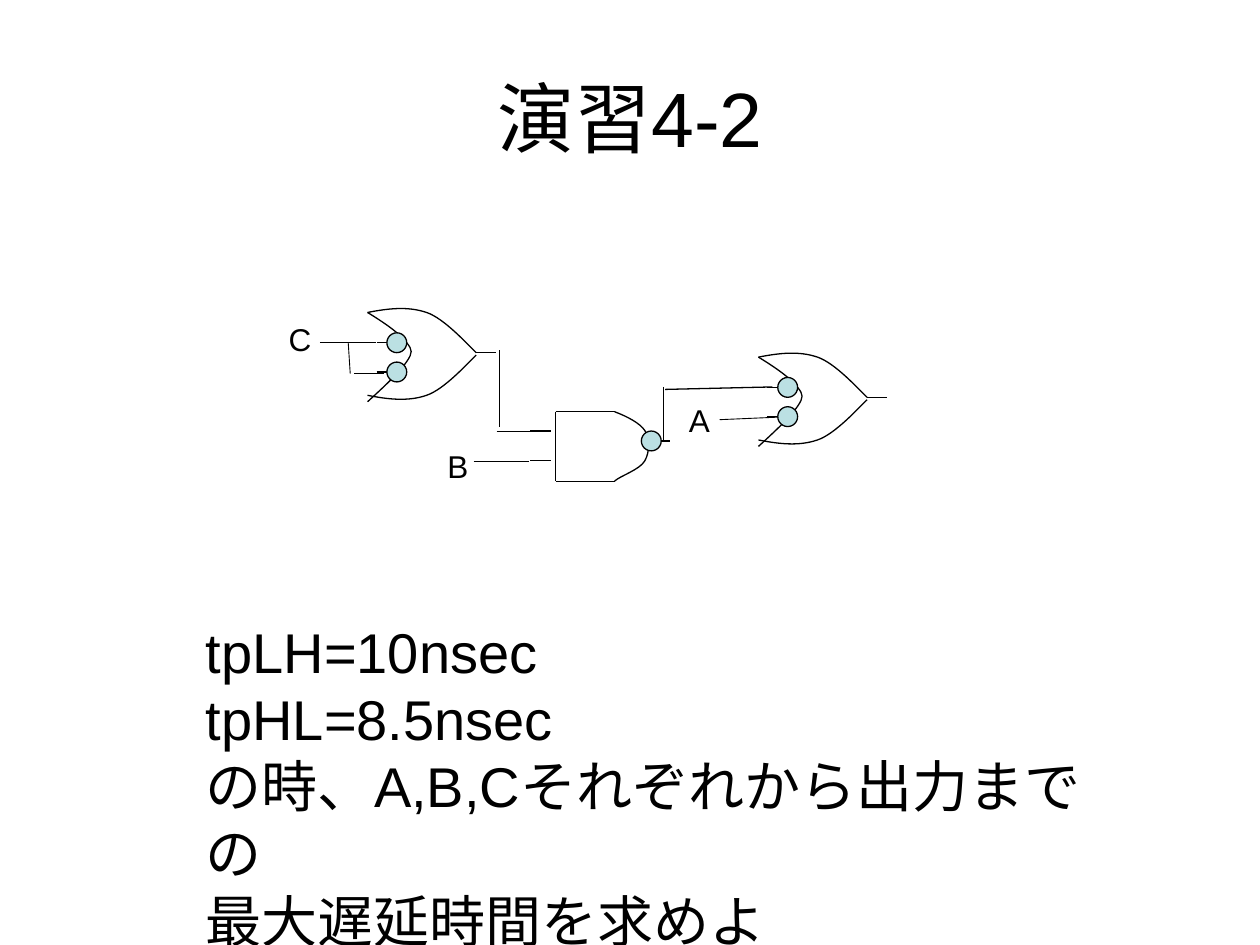
from lxml import etree
from pptx import Presentation
from pptx import util as u
from pptx.dml.color import RGBColor
from pptx.enum import shapes, text
from pptx.oxml import ns

BLACK = RGBColor(0x00, 0x00, 0x00)
BUBBLE_BLUE = RGBColor(0xBB, 0xE0, 0xE3)
BUBBLE_SIZE = 0.4
GATE_PT, WIRE_PT = 0.75, 0.5
UNITS_PER_CM = 1000

OR_UPPER = [(0, 0.13), (0.41, 0.05), (0.81, 0), (1.19, 0.13),
            (1.55, 0.25), (2.03, 0.79), (2.19, 0.94)]
OR_HEIGHT = 1.93
OR_BACK = [(0, 0.13), (0.33, 0.33), (0.66, 0.56), (0.79, 0.74),
           (0.91, 0.89), (0.91, 0.94), (0.79, 1.12),
           (0.66, 1.32), (0.33, 1.63), (0, 1.93)]
NAND_FRONT = [(1.7, 0), (1.96, 0.1), (2.21, 0.23), (2.31, 0.38),
              (2.41, 0.56), (2.41, 0.81), (2.31, 0.99),
              (2.21, 1.17), (1.8, 1.3), (1.7, 1.4)]

WIRES = [
    (4.45, 2.52, 5.13, 2.52),
    (7.82, 1.63, 7.82, 2.72),
    (8.95, 2.29, 10.11, 2.24),
    (3.99, 3.13, 5.11, 3.13),
    (4.5, 0.89, 4.5, 2.44),
    (0.89, 0.74, 2.01, 0.74),
    (1.46, 0.74, 1.5, 1.36),
    (1.58, 1.36, 2.19, 1.36),
]
INPUT_LABELS = [("A", 8.08, 1.78, 1.02), ("B", 3.21, 2.72, 1.8), ("C", 0.01, 0.15, 1.8)]
QUESTION = ["tpLH=10nsec", "tpHL=8.5nsec",
            "の時、A,B,Cそれぞれから出力までの", "最大遅延時間を求めよ"]


def outline(part, points):
    part.line.color.rgb = BLACK
    part.line.width = u.Pt(points)


def add_wire(parts, left, top, ends, points=GATE_PT):
    x1, y1, x2, y2 = ends
    wire = parts.add_connector(
        shapes.MSO_CONNECTOR.STRAIGHT, u.Cm(left + x1), u.Cm(top + y1),
        u.Cm(left + x2), u.Cm(top + y2))
    outline(wire, points)
    etree.SubElement(wire._element.spPr, ns.qn("a:effectLst"))


def add_curve(parts, left, top, controls):
    first, *rest = [(round((left + x) * UNITS_PER_CM), round((top + y) * UNITS_PER_CM))
                    for x, y in controls]
    builder = parts.build_freeform(*first, scale=u.Cm(1) / UNITS_PER_CM)
    builder.add_line_segments(rest, close=False)
    curve = builder.convert_to_shape()
    segments = list(curve._element.iter(ns.qn("a:lnTo")))
    for start in range(0, len(segments), 3):
        bezier = etree.SubElement(segments[start].getparent(), ns.qn("a:cubicBezTo"))
        for segment in segments[start:start + 3]:
            bezier.append(segment[0])
            segment.getparent().remove(segment)
    curve.shadow.inherit = False
    curve.fill.background()
    outline(curve, GATE_PT)


def add_bubble(parts, left, top):
    bubble = parts.add_shape(shapes.MSO_SHAPE.OVAL, u.Cm(left), u.Cm(top),
                             u.Cm(BUBBLE_SIZE), u.Cm(BUBBLE_SIZE))
    bubble.shadow.inherit = False
    bubble.fill.solid()
    bubble.fill.fore_color.rgb = BUBBLE_BLUE
    outline(bubble, GATE_PT)


def add_inverted_input_or(slide, left, top):
    parts = slide.shapes.add_group_shape().shapes
    lower = [(x, OR_HEIGHT - y) for x, y in OR_UPPER]
    for controls in (OR_UPPER, lower, OR_BACK):
        add_curve(parts, left, top, controls)
    add_wire(parts, left, top, (2.19, 0.94, 2.59, 0.94))
    inputs = (0.74, 1.33)
    for y in inputs:
        add_wire(parts, left, top, (0.18, y, 0.58, y))
    for y in inputs:
        add_bubble(parts, left + 0.39, top + y - BUBBLE_SIZE / 2)


def add_nand(slide, left, top):
    parts = slide.shapes.add_group_shape().shapes
    for ends in [(0.51, 0, 1.7, 0), (0.51, 1.4, 1.7, 1.4)]:
        add_wire(parts, left, top, ends)
    add_curve(parts, left, top, NAND_FRONT)
    for ends in [(0.51, 0, 0.51, 1.4), (0, 0.39, 0.41, 0.39),
                 (0, 0.99, 0.41, 0.99), (2.41, 0.59, 2.82, 0.59)]:
        add_wire(parts, left, top, ends)
    add_bubble(parts, left + 2.24, top + 0.39)


def add_run(paragraph, wording, size):
    run = paragraph.add_run()
    run.text = wording
    run.font.size = u.Pt(size)
    run.font.name = "Arial"
    run.font.color.rgb = BLACK


def add_title(slide, left, top, width, height):
    title = slide.shapes.title
    title.left, title.top = u.Cm(left), u.Cm(top)
    title.width, title.height = u.Cm(width), u.Cm(height)
    title.text_frame.vertical_anchor = text.MSO_ANCHOR.MIDDLE
    heading = title.text_frame.paragraphs[0]
    heading.alignment = text.PP_ALIGN.CENTER
    add_run(heading, "演習4-2", 44)


def add_circuit(slide, left, top):
    add_nand(slide, left + 5.13, top + 2.13)
    add_inverted_input_or(slide, left + 1.85, top)
    add_wire(slide.shapes, left, top, (7.85, 1.68, 10.01, 1.63))
    add_inverted_input_or(slide, left + 9.73, top + 0.9)
    for ends in WIRES:
        add_wire(slide.shapes, left, top, ends, WIRE_PT)
    for letter, x, y, height in INPUT_LABELS:
        label = slide.shapes.add_textbox(u.Cm(left + x), u.Cm(top + y),
                                         u.Cm(0.88), u.Cm(height))
        label.text_frame.word_wrap = False
        label.text_frame.auto_size = text.MSO_AUTO_SIZE.SHAPE_TO_FIT_TEXT
        add_run(label.text_frame.paragraphs[0], letter, 18)


def add_question(slide, left, top, width, height):
    frame = slide.shapes.add_textbox(u.Cm(left), u.Cm(top),
                                     u.Cm(width), u.Cm(height)).text_frame
    frame.word_wrap = True
    frame.auto_size = text.MSO_AUTO_SIZE.SHAPE_TO_FIT_TEXT
    for index, wording in enumerate(QUESTION):
        line = frame.add_paragraph() if index else frame.paragraphs[0]
        add_run(line, wording, 32)


def main():
    deck = Presentation()
    deck.slide_width, deck.slide_height = u.Cm(25.4), u.Cm(19.05)
    slide = deck.slides.add_slide(deck.slide_layouts[5])
    add_title(slide, 1.27, 0.76, 22.86, 3.18)
    add_circuit(slide, 5.56, 6.17)
    add_question(slide, 3.9, 12.32, 18.47, 5.74)
    deck.save("out.pptx")


if __name__ == "__main__":
    main()
